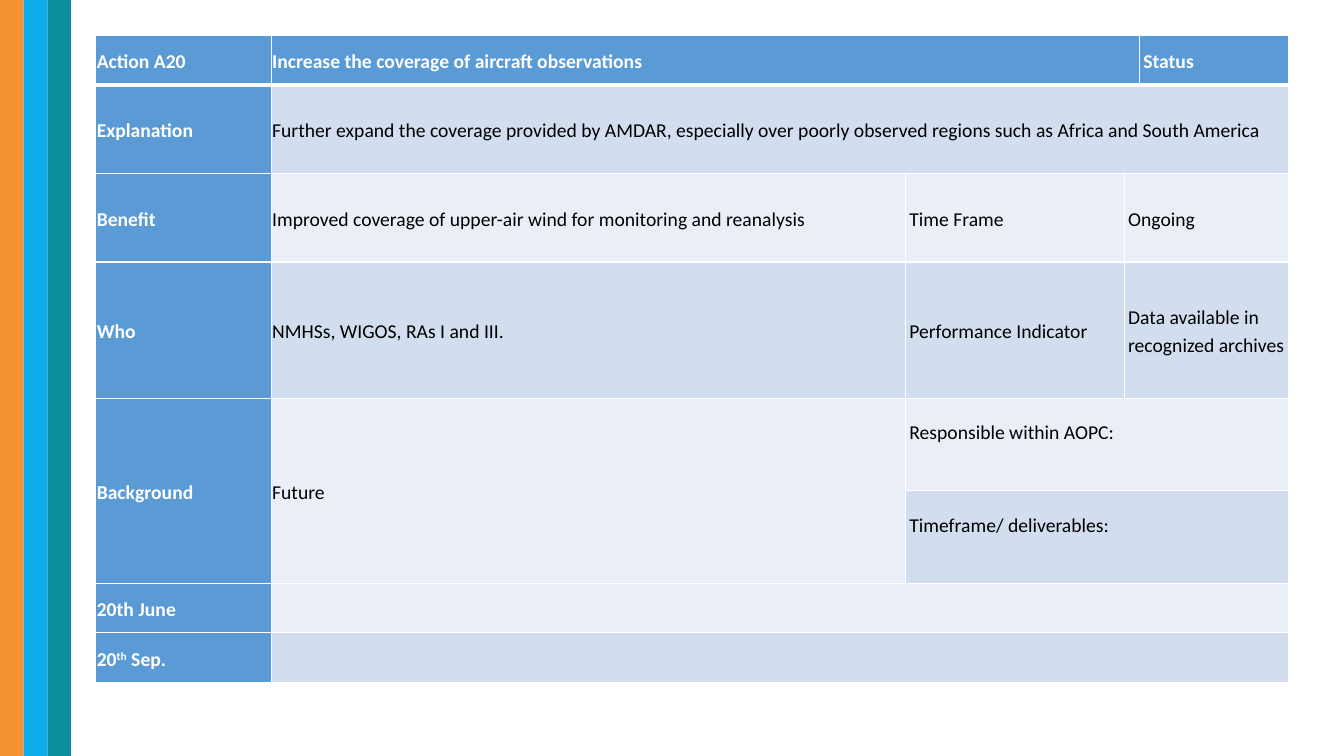
import pptx
import pptx.dml.color
import pptx.enum.shapes
import pptx.enum.text
import pptx.oxml
import pptx.oxml.ns
import pptx.util

WIDE, HIGH = 13.33, 7.5
COLS = [1.74, 6.29, 2.17, 0.15, 1.48]
ROWS = [0.49, 0.88, 0.88, 1.35, 0.92, 0.92, 0.49, 0.49]
BLUE, DARK, PALE, WHITE, BLACK = "5B9BD5", "D2DEEF", "EAEFF7", "FFFFFF", "000000"
STRIPES = ["F49234", "0CADEA", "0A8F9D"]
BANDS = [BLUE, DARK, PALE, DARK, PALE, DARK, PALE, DARK]
LINE = 0.27  # height of one line of text

# row, column, rows spanned, columns spanned, text; ^ encloses a superscript
CELLS = [
    (0, 0, 1, 1, "Action A20"),
    (0, 1, 1, 3, "Increase the coverage of aircraft observations"),
    (0, 4, 1, 1, "Status"),
    (1, 0, 1, 1, "Explanation"),
    (1, 1, 1, 4, "Further expand the coverage provided by AMDAR, especially over "
                 "poorly observed regions such as Africa and South America"),
    (2, 0, 1, 1, "Benefit"),
    (2, 1, 1, 1, "Improved coverage of upper-air wind for monitoring and reanalysis"),
    (2, 2, 1, 1, "Time Frame"),
    (2, 3, 1, 2, "Ongoing"),
    (3, 0, 1, 1, "Who"),
    (3, 1, 1, 1, "NMHSs, WIGOS, RAs I and III."),
    (3, 2, 1, 1, "Performance Indicator"),
    (3, 3, 1, 2, "Data available in recognized archives"),
    (4, 0, 2, 1, "Background"),
    (4, 1, 2, 1, "Future"),
    (4, 2, 1, 3, "Responsible within AOPC:"),
    (5, 2, 1, 3, "Timeframe/ deliverables:"),
    (6, 0, 1, 1, "20th June"),
    (6, 1, 1, 4, ""),
    (7, 0, 1, 1, "20^th^ Sep."),
    (7, 1, 1, 4, ""),
]


def inch(size):
    return pptx.util.Inches(size)


def paint(fill, color):
    fill.solid()
    fill.fore_color.rgb = pptx.dml.color.RGBColor.from_string(color)


def write(frame, text, size=14, color=BLACK, bold=False):
    par = frame.paragraphs[0]
    par.line_spacing = 1.15
    for i, part in enumerate(text.split("^")):
        if not part:
            continue
        run = par.add_run()
        run.text = part
        run.font.name = "Calibri"
        run.font.size = pptx.util.Pt(size)
        run.font.bold = bold
        paint(run.font.fill, color)
        if i % 2:
            run._r.get_or_add_rPr().set("baseline", "30000")


def edge(cell, top, base):
    """Draw white borders; top and base are widths in points."""
    props = cell._tc.get_or_add_tcPr()
    sides = [("L", 1), ("R", 1), ("T", top), ("B", base)]
    for i, (side, width) in enumerate(sides):
        props.insert(i, pptx.oxml.parse_xml(
            f'<a:ln{side} {pptx.oxml.ns.nsdecls("a")} w="{pptx.util.Pt(width)}">'
            f'<a:solidFill><a:srgbClr val="{WHITE}"/></a:solidFill></a:ln{side}>'))


def pad(cell, side, top, base):
    cell.margin_left = cell.margin_right = inch(side)
    cell.margin_top, cell.margin_bottom = inch(top), inch(base)


def stripe(slide, n, color):
    step = WIDE * 0.0176
    bar = slide.shapes.add_shape(
        pptx.enum.shapes.MSO_SHAPE.RECTANGLE,
        inch(n * step), 0, inch(step), inch(HIGH))
    bar.shadow.inherit = False
    bar.line.fill.background()
    paint(bar.fill, color)


def grid(slide):
    table = slide.shapes.add_table(
        len(ROWS), len(COLS), inch(0.95), inch(0.35),
        inch(sum(COLS)), inch(sum(ROWS))).table
    for col, width in zip(table.columns, COLS):
        col.width = inch(width)
    for r, high in enumerate(ROWS):
        table.rows[r].height = inch(high)
        for c in range(len(COLS)):
            cell = table.cell(r, c)
            paint(cell.fill, BLUE if c == 0 else BANDS[r])
            edge(cell, 3 if r == 1 else 1, 3 if r == 0 else 1)
    return table


def fill(table, r, c, down, wide, text):
    cell = table.cell(r, c)
    if down * wide > 1:
        cell.merge(table.cell(r + down - 1, c + wide - 1))
    cell.vertical_anchor = pptx.enum.text.MSO_ANCHOR.MIDDLE
    if c < 2:
        pad(cell, 0.01, 0.01, 0.01)
    else:
        pad(cell, 0.04, 0.02, 0.02 + (LINE if wide == 3 else 0))
    head = r == 0 or c == 0
    write(cell.text_frame, text, color=WHITE if head else BLACK, bold=head)


def main():
    deck = pptx.Presentation()
    deck.slide_width, deck.slide_height = inch(WIDE), inch(HIGH)
    slide = deck.slides.add_slide(deck.slide_layouts[6])
    for n, color in enumerate(STRIPES):
        stripe(slide, n, color)
    table = grid(slide)
    for item in CELLS:
        fill(table, *item)
    deck.save("out.pptx")


if __name__ == "__main__":
    main()
